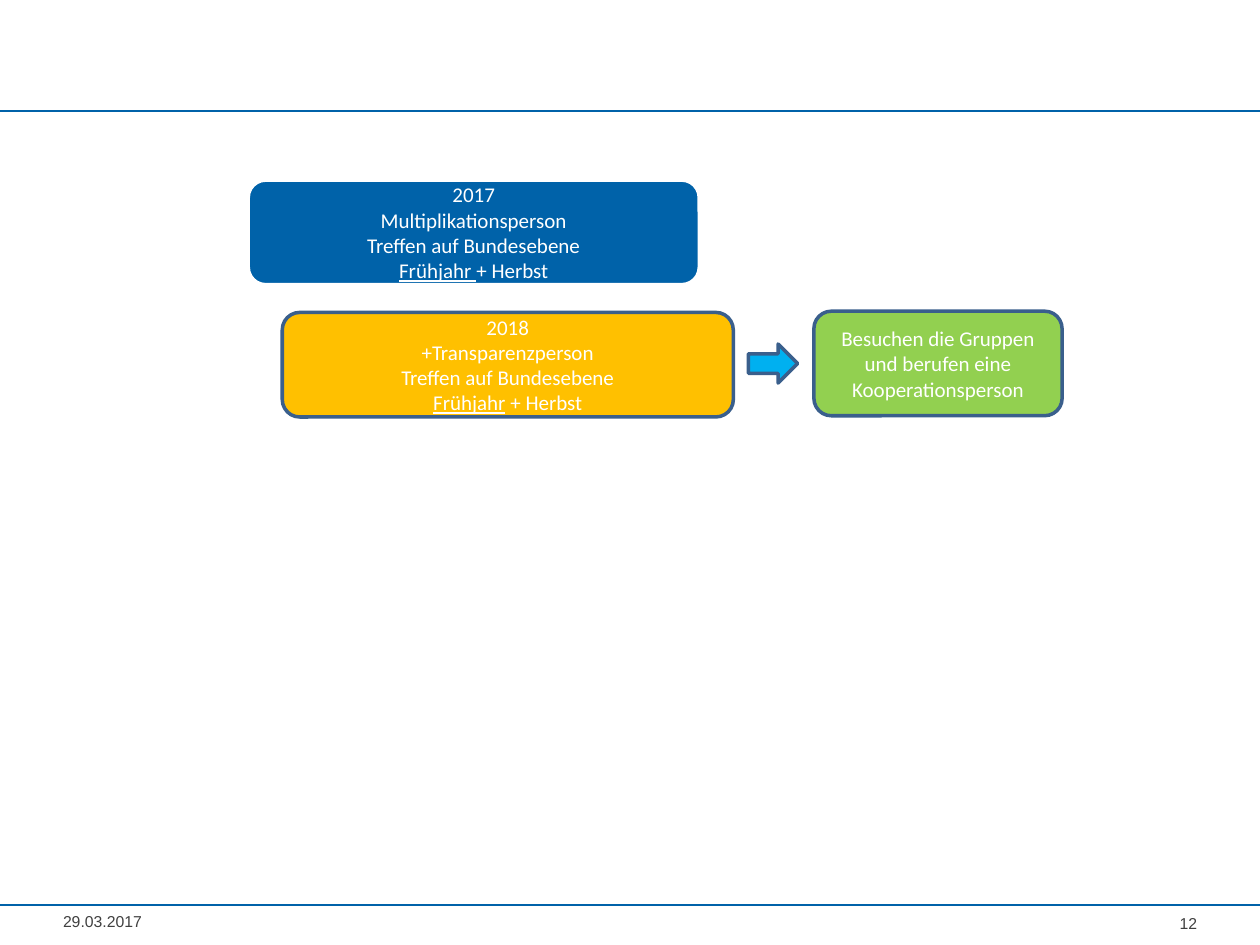
from dataclasses import dataclass
from typing import Any, NamedTuple

from lxml.etree import SubElement
from pptx import Presentation
from pptx.dml.color import RGBColor as Rgb
from pptx.enum.shapes import MSO_CONNECTOR as Conn, MSO_SHAPE as Geo
from pptx.enum.text import MSO_ANCHOR as Anchor, PP_ALIGN as Align
from pptx.oxml.ns import qn
from pptx.util import Inches, Pt


@dataclass(frozen=True)
class Theme:
    blue: str = "0062A9"
    gold: str = "FFC000"
    green: str = "92D050"
    sky: str = "00B0F0"
    edge: str = "3A5F8C"
    white: str = "FFFFFF"
    gray: str = "404040"
    body: str = "Calibri"
    foot: str = "Arial"
    large: float = 12
    small: float = 9
    rule: float = 1
    frame: float = 2


class Run(NamedTuple):
    text: str
    under: bool = False


class Card(NamedTuple):
    left: float
    top: float
    width: float
    fill: str
    line: str
    rows: list[list[Run]]


class Note(NamedTuple):
    left: float
    width: float
    height: float
    text: str
    align: Align


THEME = Theme()
CARD_H = 0.83
YEAR_W = 3.58
RULES = (0.88, 7.18)
MEET = [Run("Treffen auf Bundesebene")]

CARDS = [
    Card(2.24, 2.48, YEAR_W, THEME.gold, THEME.edge,
         [[Run("2018")], [Run("+Transparenzperson")], MEET,
          [Run("Frühjahr", True), Run(" + Herbst")]]),
    Card(1.97, 1.43, YEAR_W, THEME.blue, THEME.white,
         [[Run("2017")], [Run("Multiplikationsperson")], MEET,
          [Run("Frühjahr ", True), Run("+ Herbst")]]),
    Card(6.46, 2.47, 1.97, THEME.green, THEME.edge,
         [[Run("Besuchen die Gruppen und berufen eine Kooperationsperson")]]),
]
NOTES = [
    Note(0.5, 1.15, 0.26, "29.03.2017", Align.LEFT),
    Note(8.82, 0.68, 0.3, "12", Align.RIGHT),
]


def apply(item: Any, form: dict[str, Any]) -> None:
    for key, value in form.items():
        setattr(item, key, value)


def write(frame: Any, rows: list[list[Run]], align: Align,
          face: str, size: float, color: str) -> None:
    apply(frame, {"word_wrap": True, "vertical_anchor": Anchor.MIDDLE})
    for i, row in enumerate(rows):
        para = frame.add_paragraph() if i else frame.paragraphs[0]
        para.alignment = align
        for part in row:
            run = para.add_run()
            run.text = part.text
            apply(run.font, {"name": face, "size": Pt(size), "underline": part.under})
            run.font.color.rgb = Rgb.from_string(color)


def draw_shape(slide: Any, geo: Geo, box: tuple[float, ...],
               fill: str, line: str) -> Any:
    shape = slide.shapes.add_shape(geo, *map(Inches, box))
    shape.shadow.inherit = False
    shape.fill.solid()
    shape.fill.fore_color.rgb = Rgb.from_string(fill)
    shape.line.color.rgb = Rgb.from_string(line)
    shape.line.width = Pt(THEME.frame)
    return shape


def draw_rule(slide: Any, top: float) -> None:
    rule = slide.shapes.add_connector(
        Conn.STRAIGHT, Inches(0), Inches(top), Inches(10), Inches(top))
    rule.line.color.rgb = Rgb.from_string(THEME.blue)
    rule.line.width = Pt(THEME.rule)
    SubElement(rule._element.spPr, qn("a:effectLst"))


def draw_card(slide: Any, card: Card) -> None:
    box = (card.left, card.top, card.width, CARD_H)
    shape = draw_shape(slide, Geo.ROUNDED_RECTANGLE, box, card.fill, card.line)
    write(shape.text_frame, card.rows, Align.CENTER,
          THEME.body, THEME.large, THEME.white)


def draw_note(slide: Any, note: Note) -> None:
    box = (note.left, RULES[1], note.width, note.height)
    frame = slide.shapes.add_textbox(*map(Inches, box)).text_frame
    sides = ("left", "top", "right", "bottom")
    apply(frame, {f"margin_{side}": Inches(0) for side in sides})
    write(frame, [[Run(note.text)]], note.align,
          THEME.foot, THEME.small, THEME.gray)


def main() -> None:
    deck = Presentation()
    apply(deck, {"slide_width": Inches(10), "slide_height": Inches(7.5)})
    slide = deck.slides.add_slide(deck.slide_layouts[6])
    for top in RULES:
        draw_rule(slide, top)
    for note in NOTES:
        draw_note(slide, note)
    for card in CARDS:
        draw_card(slide, card)
    arrow = draw_shape(slide, Geo.DOWN_ARROW, (5.98, 2.69, 0.31, 0.39),
                       THEME.sky, THEME.edge)
    arrow.rotation = 270
    deck.save("out.pptx")


if __name__ == "__main__":
    main()
